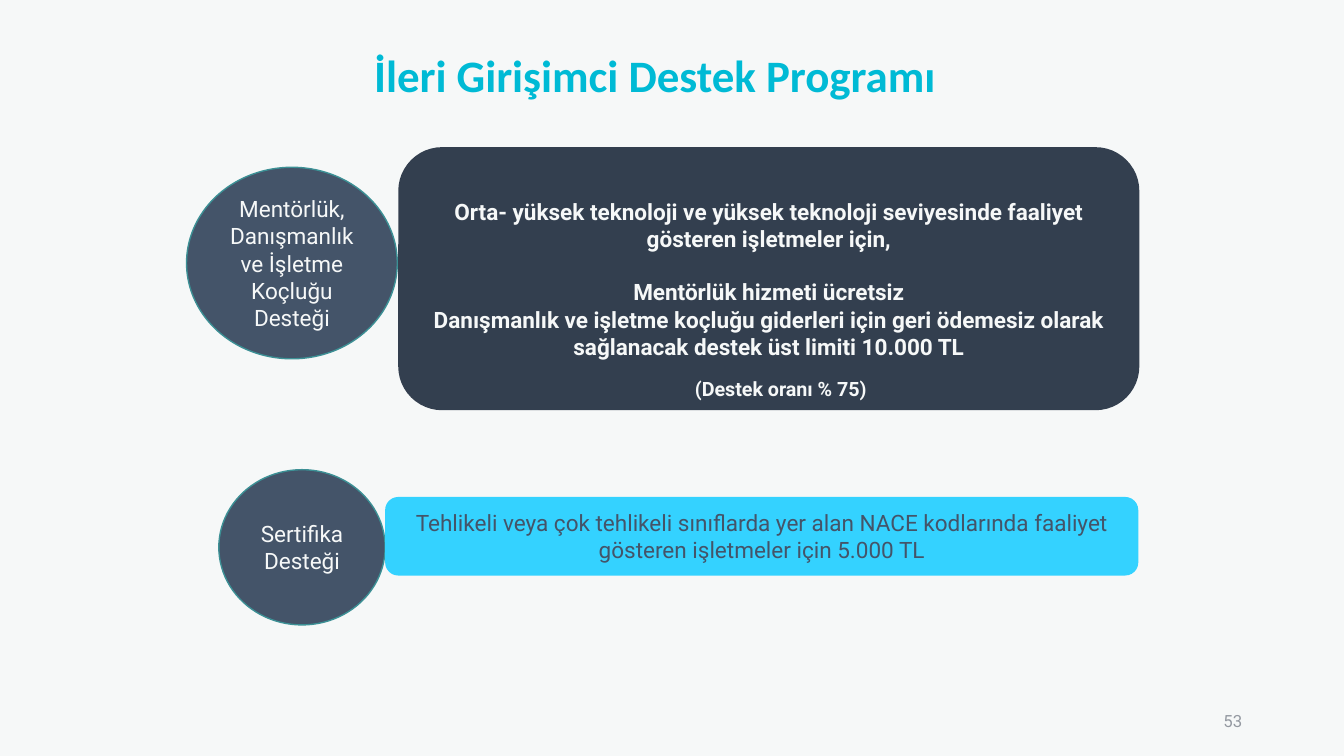
"""Build the entrepreneur support programme slide."""
import dataclasses
import typing

import pptx
import pptx.dml.color
import pptx.enum.shapes
import pptx.enum.text
import pptx.util

Inches = pptx.util.Inches
Pt = pptx.util.Pt
Kind = pptx.enum.shapes.MSO_SHAPE
Align = pptx.enum.text.PP_ALIGN

PALE = "F6F8F8"
SLATE = "445469"
NAVY = "333F4F"
TEAL = "3C9095"
SKY = "34D2FF"
TURQUOISE = "00BAD5"
GREY = "9499A1"


@dataclasses.dataclass(frozen=True)
class Style:
    size: float = 16.1
    color: str = PALE
    bold: bool = False
    name: str = "Roboto"
    align: Align = Align.CENTER


@dataclasses.dataclass(frozen=True)
class Panel:
    kind: Kind
    place: tuple[float, float, float, float]
    lines: tuple[str, ...]
    style: Style = Style()
    fill: typing.Optional[str] = None
    outline: typing.Optional[str] = None
    gaps: tuple[float, ...] = ()


PANELS = (
    Panel(
        Kind.ROUNDED_RECTANGLE,
        (3.95, 1.46, 7.35, 2.61),
        (
            "Orta- yüksek teknoloji ve yüksek teknoloji seviyesinde faaliyet gösteren işletmeler için,",
            "Mentörlük hizmeti ücretsiz",
            "Danışmanlık ve işletme koçluğu giderleri için geri ödemesiz olarak sağlanacak destek üst limiti 10.000 TL",
        ),
        Style(bold=True),
        fill=NAVY,
        gaps=(0, 19, 0),
    ),
    Panel(
        Kind.OVAL,
        (1.85, 1.66, 2.09, 1.9),
        ("Mentörlük, Danışmanlık ve İşletme Koçluğu Desteği",),
        fill=SLATE,
        outline=TEAL,
    ),
    Panel(
        Kind.ROUNDED_RECTANGLE,
        (3.96, 3.63, 7.57, 0.45),
        ("(Destek oranı % 75)",),
        Style(size=14.1, bold=True),
    ),
    Panel(
        Kind.OVAL,
        (2.17, 4.66, 1.65, 1.54),
        ("Sertifika Desteği",),
        fill=SLATE,
        outline=TEAL,
    ),
    Panel(
        Kind.ROUNDED_RECTANGLE,
        (3.82, 4.93, 7.47, 0.78),
        (
            "Tehlikeli veya çok tehlikeli sınıflarda yer alan NACE kodlarında faaliyet gösteren işletmeler için 5.000 TL",
        ),
        Style(color=SLATE),
        fill=SKY,
    ),
)


def rgb(code: str) -> pptx.dml.color.RGBColor:
    return pptx.dml.color.RGBColor.from_string(code)


def inches(place: tuple[float, ...]) -> list[pptx.util.Length]:
    return [Inches(length) for length in place]


def set_all(target: typing.Any, values: dict[str, typing.Any]) -> None:
    for name, value in values.items():
        setattr(target, name, value)


def write(shape: typing.Any, lines: tuple[str, ...], style: Style, gaps: tuple[float, ...] = ()) -> None:
    frame = shape.text_frame
    set_all(frame, {
        "word_wrap": True,
        "auto_size": pptx.enum.text.MSO_AUTO_SIZE.NONE,
        "vertical_anchor": pptx.enum.text.MSO_ANCHOR.MIDDLE,
    })
    for index, line in enumerate(lines):
        para = frame.add_paragraph() if index else frame.paragraphs[0]
        para.alignment = style.align
        if gaps:
            para.space_before = Pt(gaps[index])
        span = para.add_run()
        span.text = line
        set_all(span.font, {"size": Pt(style.size), "bold": style.bold, "name": style.name})
        span.font.color.rgb = rgb(style.color)


def draw_panel(page: typing.Any, panel: Panel) -> None:
    shape = page.shapes.add_shape(panel.kind, *inches(panel.place))
    shape.shadow.inherit = False
    if panel.fill:
        shape.fill.solid()
        shape.fill.fore_color.rgb = rgb(panel.fill)
    else:
        shape.fill.background()
    if panel.outline:
        shape.line.color.rgb = rgb(panel.outline)
        shape.line.width = Pt(1)
    else:
        shape.line.fill.background()
    write(shape, panel.lines, panel.style, panel.gaps)


def main() -> None:
    deck = pptx.Presentation()
    set_all(deck, {"slide_width": Inches(13.33), "slide_height": Inches(7.5)})
    page = deck.slides.add_slide(deck.slide_layouts.get_by_name("Title Only"))
    page.background.fill.solid()
    page.background.fill.fore_color.rgb = rgb(PALE)

    title = page.shapes.title
    set_all(title, dict(zip(("left", "top", "width", "height"), inches((3.61, 0.3, 7.57, 0.94)))))
    write(title, ("İleri Girişimci Destek Programı",), Style(32.1, TURQUOISE, True, "Calibri", Align.LEFT))
    title.text_frame.paragraphs[0].line_spacing = 0.9

    number = page.shapes.add_textbox(*inches((9.42, 6.95, 3, 0.4)))
    write(number, ("53",), Style(size=12, color=GREY, align=Align.RIGHT))

    for panel in PANELS:
        draw_panel(page, panel)
    deck.save("out.pptx")


if __name__ == "__main__":
    main()
